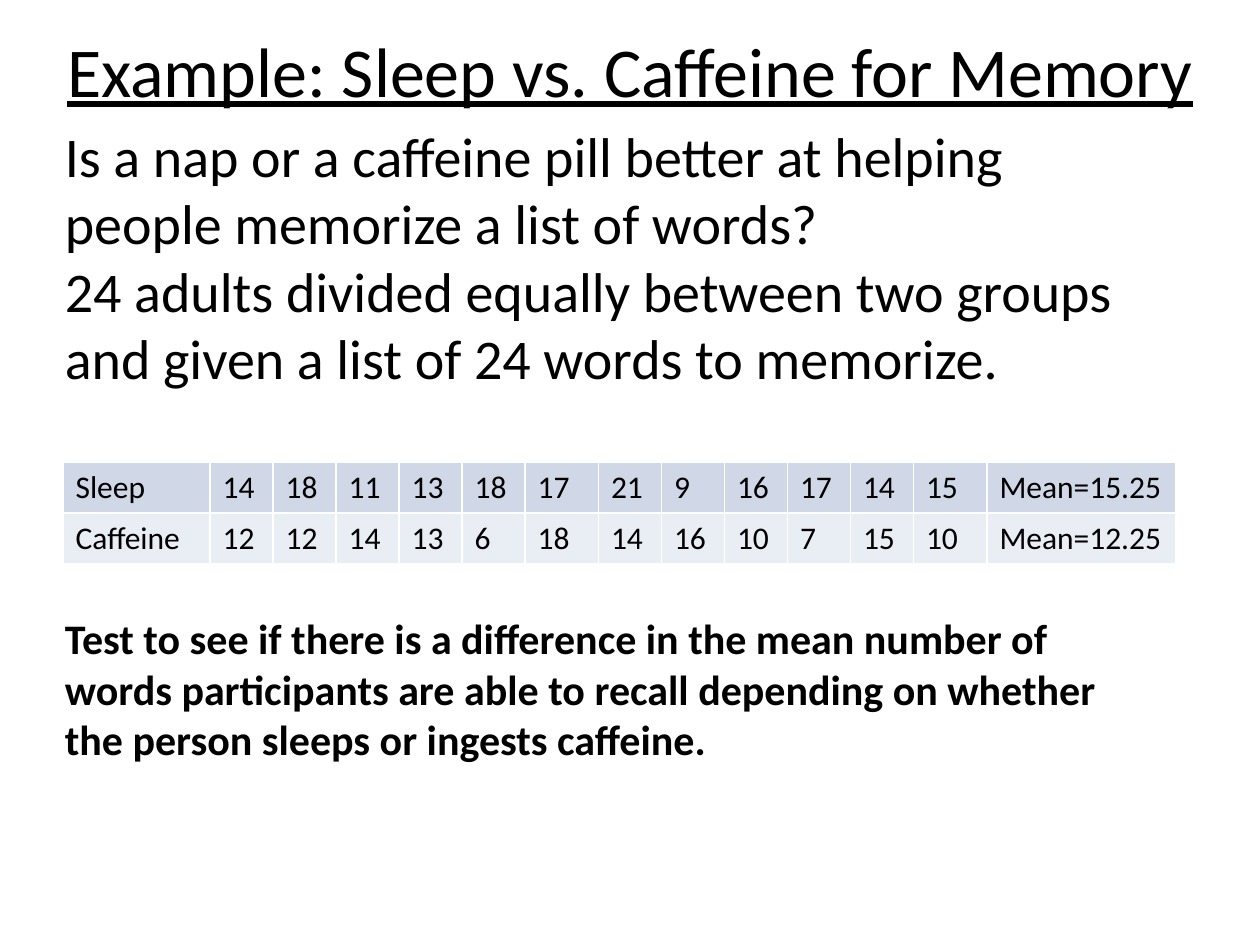
from dataclasses import dataclass

from pptx import Presentation
from pptx.dml.color import RGBColor
from pptx.enum.text import MSO_ANCHOR, MSO_AUTO_SIZE, PP_ALIGN
from pptx.slide import Slide
from pptx.text.text import TextFrame
from pptx.util import Pt

BLACK = RGBColor(0x00, 0x00, 0x00)
SLEEP_FILL = RGBColor(0xD0, 0xD8, 0xE8)
CAFFEINE_FILL = RGBColor(0xE9, 0xED, 0xF4)
FONT = "Calibri"
COLUMN_WIDTHS = [84, *[36] * 5, 42, *[36] * 5, 42, 108]
ROW_HEIGHT = 29.2


@dataclass(frozen=True)
class Line:
    text: str
    size: float
    bold: bool = False
    underline: bool = False
    centred: bool = False
    space_before: float = 0


@dataclass(frozen=True)
class Group:
    name: str
    scores: tuple[int, ...]
    fill: RGBColor

    def cell_texts(self) -> list[str]:
        mean = sum(self.scores) / len(self.scores)
        return [self.name, *map(str, self.scores), f"Mean={mean:.2f}"]


TITLE = Line("Example: Sleep vs. Caffeine for Memory", 40, underline=True, centred=True)
BODY = [
    Line("Is a nap or a caffeine pill better at helping people memorize a list of words?", 32),
    Line("24 adults divided equally between two groups and given a list of 24 words to memorize.", 32),
    Line(
        "Test to see if there is a difference in the mean number of words participants "
        "are able to recall depending on whether the person sleeps or ingests caffeine.",
        24, bold=True, space_before=127,
    ),
]
GROUPS = [
    Group("Sleep", (14, 18, 11, 13, 18, 17, 21, 9, 16, 17, 14, 15), SLEEP_FILL),
    Group("Caffeine", (12, 12, 14, 13, 6, 18, 14, 16, 10, 7, 15, 10), CAFFEINE_FILL),
]


def write_lines(text_frame: TextFrame, lines: list[Line]) -> None:
    for index, line in enumerate(lines):
        paragraph = text_frame.paragraphs[0] if index == 0 else text_frame.add_paragraph()
        paragraph.text = line.text
        paragraph.alignment = PP_ALIGN.CENTER if line.centred else PP_ALIGN.LEFT
        if line.space_before:
            paragraph.space_before = Pt(line.space_before)
        font = paragraph.font
        font.name = FONT
        font.size = Pt(line.size)
        font.bold = line.bold
        font.underline = line.underline
        font.color.rgb = BLACK


def add_text(slide: Slide, left: float, top: float, width: float, height: float,
             lines: list[Line], auto_size: MSO_AUTO_SIZE) -> None:
    shape = slide.shapes.add_textbox(Pt(left), Pt(top), Pt(width), Pt(height))
    text_frame = shape.text_frame
    text_frame.word_wrap = True
    text_frame.auto_size = auto_size
    text_frame.vertical_anchor = MSO_ANCHOR.TOP
    write_lines(text_frame, lines)


def add_score_table(slide: Slide, left: float, top: float, groups: list[Group]) -> None:
    table = slide.shapes.add_table(
        len(groups), len(COLUMN_WIDTHS), Pt(left), Pt(top),
        Pt(sum(COLUMN_WIDTHS)), Pt(ROW_HEIGHT * len(groups)),
    ).table
    table.first_row = False
    table.horz_banding = False
    for column, width in zip(table.columns, COLUMN_WIDTHS):
        column.width = Pt(width)
    for row, group in zip(table.rows, groups):
        row.height = Pt(ROW_HEIGHT)
        for cell, text in zip(row.cells, group.cell_texts()):
            cell.fill.solid()
            cell.fill.fore_color.rgb = group.fill
            write_lines(cell.text_frame, [Line(text, 18)])


def main() -> None:
    presentation = Presentation()
    presentation.slide_width = Pt(720)
    presentation.slide_height = Pt(540)
    slide = presentation.slides.add_slide(presentation.slide_layouts[6])
    add_text(slide, 30, 66, 618, 376, BODY, MSO_AUTO_SIZE.SHAPE_TO_FIT_TEXT)
    add_score_table(slide, 36, 264, GROUPS)
    add_text(slide, 0, 12, 720, 66, [TITLE], MSO_AUTO_SIZE.NONE)
    presentation.save("out.pptx")


if __name__ == "__main__":
    main()
